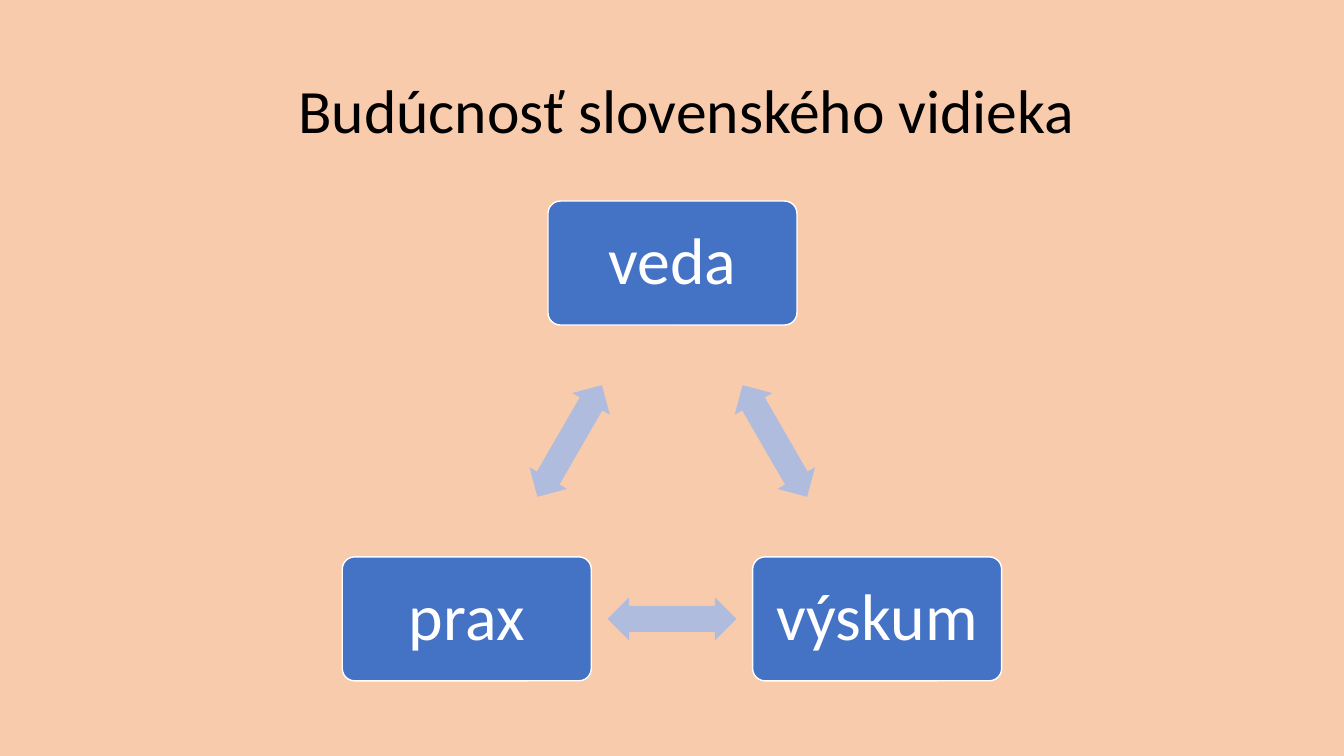
from pptx import Presentation
from pptx.dml.color import RGBColor
from pptx.enum.shapes import MSO_SHAPE as Preset
from pptx.enum.text import MSO_ANCHOR as Anchor, PP_ALIGN as Align
from pptx.util import Inches, Pt

COLORS = {
    "background": "F8CBAD",
    "title": "000000",
    "box": "4472C4",
    "arrow": "B0BCDE",
    "white": "FFFFFF",
}


def color(name):
    return RGBColor.from_string(COLORS[name])


def write(paragraph, text, size, color_name, align):
    paragraph.alignment = align
    paragraph.line_spacing = 0.9
    run = paragraph.add_run()
    run.text = text
    run.font.name = "Calibri"
    run.font.size = Pt(size)
    run.font.color.rgb = color(color_name)


prs = Presentation()
prs.slide_width, prs.slide_height = Inches(13.33), Inches(7.5)
slide = prs.slides.add_slide(prs.slide_layouts[5])
slide.background.fill.solid()
slide.background.fill.fore_color.rgb = color("background")

# Title, indented from the left edge of its placeholder
title = slide.shapes.title
title.left, title.top = Inches(0.92), Inches(0.4)
title.width, title.height = Inches(11.5), Inches(1.45)
title.text_frame.margin_left = Inches(2.04)
title.text_frame.vertical_anchor = Anchor.MIDDLE
write(title.text_frame.paragraphs[0], "Budúcnosť slovenského vidieka", 44, "title", Align.LEFT)

# Cycle: box centres, clockwise from the top
BOX_W, BOX_H = 2.47, 1.23
ARROW_W, ARROW_H = 1.28, 0.43
cycle = [("veda", 6.67, 2.61), ("výskum", 8.7, 6.14), ("prax", 4.63, 6.14)]

for i, (word, x, y) in enumerate(cycle):
    box = slide.shapes.add_shape(
        Preset.ROUNDED_RECTANGLE,
        Inches(x - BOX_W / 2), Inches(y - BOX_H / 2), Inches(BOX_W), Inches(BOX_H),
    )
    box.adjustments[0] = 0.1
    box.shadow.inherit = False
    box.fill.solid()
    box.fill.fore_color.rgb = color("box")
    box.line.color.rgb = color("white")
    box.line.width = Pt(1)
    box.text_frame.word_wrap = True
    box.text_frame.vertical_anchor = Anchor.MIDDLE
    write(box.text_frame.paragraphs[0], word, 47, "white", Align.CENTER)

    # Arrow halfway to the next box
    _, next_x, next_y = cycle[(i + 1) % len(cycle)]
    arrow = slide.shapes.add_shape(
        Preset.LEFT_RIGHT_ARROW,
        Inches((x + next_x - ARROW_W) / 2), Inches((y + next_y - ARROW_H) / 2),
        Inches(ARROW_W), Inches(ARROW_H),
    )
    arrow.rotation = 60 + 120 * i
    arrow.adjustments[0], arrow.adjustments[1] = 0.6, 0.5
    arrow.shadow.inherit = False
    arrow.fill.solid()
    arrow.fill.fore_color.rgb = color("arrow")
    arrow.line.fill.background()

prs.save("out.pptx")
